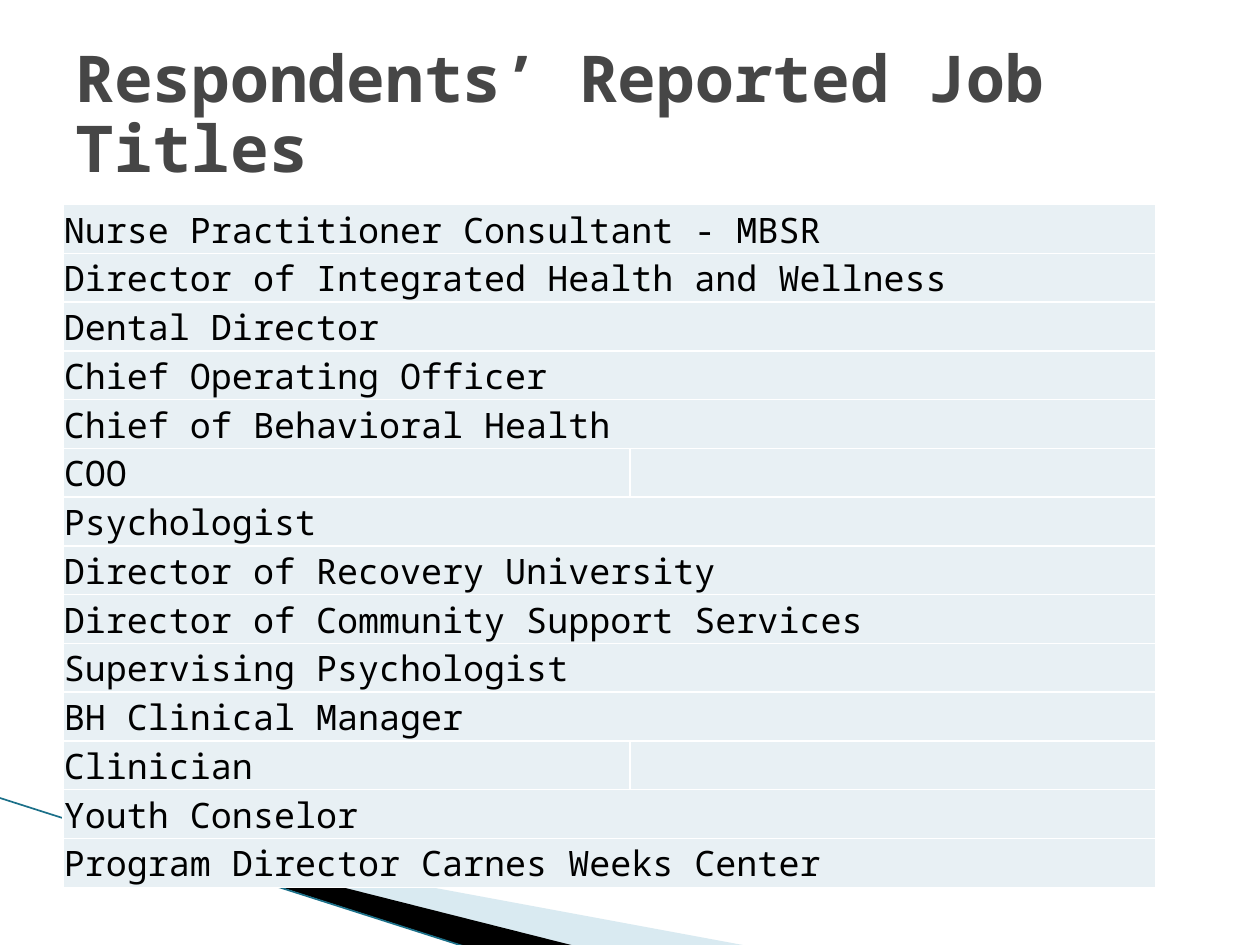
from dataclasses import dataclass

from lxml.etree import SubElement
from pptx import Presentation
from pptx.dml.color import RGBColor
from pptx.enum.shapes import MSO_CONNECTOR
from pptx.enum.text import MSO_ANCHOR
from pptx.oxml.ns import qn
from pptx.slide import Slide
from pptx.table import _Cell
from pptx.text.text import _Paragraph
from pptx.util import Pt

FONT = "Noto Sans Mono"
HUES = {
    "title": "464646",
    "text": "000000",
    "cell": "E8F0F4",
    "edge": "FFFFFF",
    "pale": "A0CBDC",
    "dark": "000000",
    "line": "1B7089",
}


@dataclass
class Wedge:
    spots: list[tuple[float, float]]
    hue: str
    alpha: int = 100


@dataclass
class Job:
    name: str
    split: bool = False


WEDGES = [
    Wedge([(39.6, 468.7), (428.4, 540.7), (328.3, 540.7), (39.6, 468)], "pale", 40),
    Wedge([(38.2, 467.3), (329, 540.7), (267.8, 541.4), (38.9, 468)], "dark"),
]
JOBS = [
    Job("Nurse Practitioner Consultant - MBSR"),
    Job("Director of Integrated Health and Wellness"),
    Job("Dental Director"),
    Job("Chief Operating Officer"),
    Job("Chief of Behavioral Health"),
    Job("COO", True),
    Job("Psychologist"),
    Job("Director of Recovery University"),
    Job("Director of Community Support Services"),
    Job("Supervising Psychologist"),
    Job("BH Clinical Manager"),
    Job("Clinician", True),
    Job("Youth Conselor"),
    Job("Program Director Carnes Weeks Center"),
]
WIDTHS = [324, 300.2]
PITCH = 27.77


def tint(key: str) -> RGBColor:
    return RGBColor.from_string(HUES[key])


def add_run(para: _Paragraph, text: str, size: float, hue: str, bold: bool = False) -> None:
    run = para.add_run()
    run.text = text
    run.font.name = FONT
    run.font.size = Pt(size)
    run.font.bold = bold
    run.font.color.rgb = tint(hue)


def add_wedge(slide: Slide, wedge: Wedge) -> None:
    spots = [(Pt(x), Pt(y)) for x, y in wedge.spots]
    pen = slide.shapes.build_freeform(*spots[0])
    pen.add_line_segments(spots[1:], close=True)
    shape = pen.convert_to_shape()
    shape.shadow.inherit = False
    shape.line.fill.background()
    shape.fill.solid()
    shape.fill.fore_color.rgb = tint(wedge.hue)
    if wedge.alpha < 100:
        color = shape.fill._xPr.find(qn("a:solidFill"))[0]
        SubElement(color, qn("a:alpha"), val=str(wedge.alpha * 1000))


def add_line(slide: Slide) -> None:
    line = slide.shapes.add_connector(
        MSO_CONNECTOR.STRAIGHT, Pt(-0.7), Pt(455.8), Pt(267.1), Pt(541.4)
    )
    line.line.color.rgb = tint("line")
    line.line.width = Pt(0.95)
    SubElement(line._element.spPr, qn("a:effectLst"))


def dress(cell: _Cell) -> None:
    cell.margin_left = cell.margin_right = cell.margin_top = Pt(0.5)
    cell.margin_bottom = Pt(0)
    cell.vertical_anchor = MSO_ANCHOR.BOTTOM
    props = cell._tc.get_or_add_tcPr()
    for side in ("lnL", "lnR", "lnT", "lnB"):
        edge = SubElement(props, qn(f"a:{side}"), w=str(Pt(1)))
        fill = SubElement(edge, qn("a:solidFill"))
        SubElement(fill, qn("a:srgbClr"), val=HUES["edge"])
    cell.fill.solid()
    cell.fill.fore_color.rgb = tint("cell")


def add_jobs(slide: Slide, jobs: list[Job]) -> None:
    frame = slide.shapes.add_table(
        len(jobs), len(WIDTHS), Pt(36), Pt(116.9), Pt(sum(WIDTHS)), Pt(PITCH * len(jobs))
    )
    table = frame.table
    table.first_row = False
    table.horz_banding = False
    for col, width in zip(table.columns, WIDTHS):
        col.width = Pt(width)
    for i, job in enumerate(jobs):
        table.rows[i].height = Pt(PITCH)
        first, last = table.cell(i, 0), table.cell(i, 1)
        dress(first)
        dress(last)
        if not job.split:
            first.merge(last)
        add_run(first.text_frame.paragraphs[0], job.name, 20, "text")


def add_title(slide: Slide, text: str) -> None:
    box = slide.shapes.add_textbox(Pt(36), Pt(21.6), Pt(648), Pt(90))
    frame = box.text_frame
    frame.word_wrap = True
    frame.vertical_anchor = MSO_ANCHOR.MIDDLE
    para = frame.paragraphs[0]
    para.line_spacing = 0.9
    add_run(para, text, 36.9, "title", True)


def main() -> None:
    deck = Presentation()
    deck.slide_width, deck.slide_height = Pt(720), Pt(540)
    slide = deck.slides.add_slide(deck.slide_layouts[6])
    for wedge in WEDGES:
        add_wedge(slide, wedge)
    add_line(slide)
    add_jobs(slide, JOBS)
    add_title(slide, "Respondents’ Reported Job Titles")
    deck.save("out.pptx")


if __name__ == "__main__":
    main()
